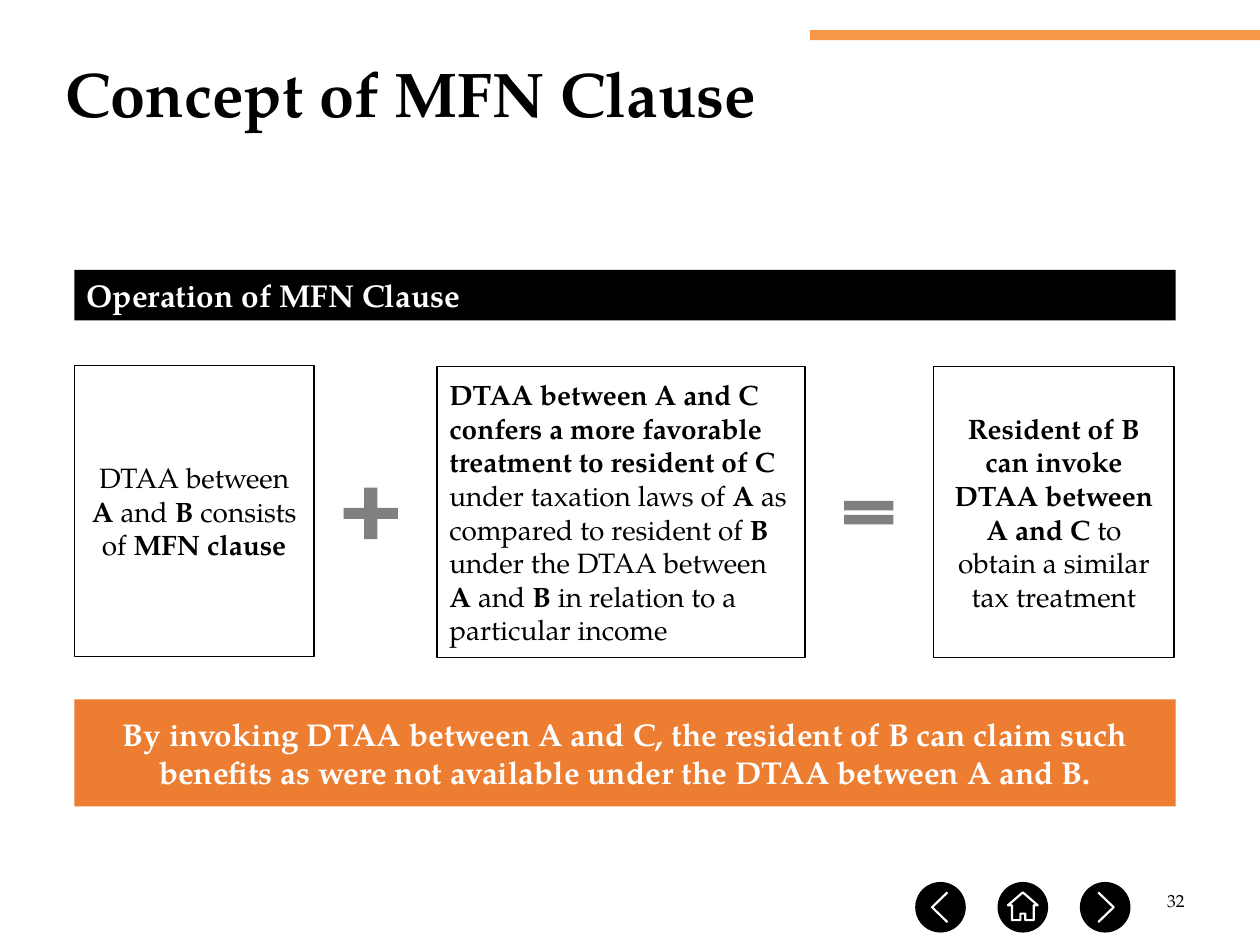
from pptx import Presentation, util as u
from pptx.dml.color import RGBColor
from pptx.enum import shapes, text

COLOURS = {
    "black": "000000",
    "white": "FFFFFF",
    "grey": "808080",
    "accent": "F79646",
    "orange": "ED7D31",
}
FONT = "TeX Gyre Pagella"
LEFT, CENTER, RIGHT = text.PP_ALIGN.LEFT, text.PP_ALIGN.CENTER, text.PP_ALIGN.RIGHT
TOP, MIDDLE = text.MSO_ANCHOR.TOP, text.MSO_ANCHOR.MIDDLE
RECT = shapes.MSO_SHAPE.RECTANGLE

deck = Presentation()
deck.slide_width, deck.slide_height = u.Cm(25.4), u.Cm(19.05)
slide = deck.slides.add_slide(deck.slide_layouts[6])


def draw(kind, place, fill=None, outline=None):
    part = slide.shapes.add_shape(kind, *map(u.Cm, place))
    part.shadow.inherit = False
    if fill:
        part.fill.solid()
        part.fill.fore_color.rgb = RGBColor.from_string(COLOURS[fill])
    else:
        part.fill.background()
    if outline:
        part.line.color.rgb = RGBColor.from_string(COLOURS[outline])
        part.line.width = u.Pt(0.75)
    else:
        part.line.fill.background()
    return part


def write(part, marked, size, colour="black", align=LEFT, anchor=MIDDLE):
    frame = part.text_frame
    frame.word_wrap = True
    frame.vertical_anchor = anchor
    paragraph = frame.paragraphs[0]
    paragraph.alignment = align
    paragraph.font.name = FONT
    paragraph.font.size = u.Pt(size)
    paragraph.font.color.rgb = RGBColor.from_string(COLOURS[colour])
    for index, words in enumerate(marked.split("*")):
        if words:
            run = paragraph.add_run()
            run.text = words
            run.font.bold = index % 2 == 1


title = slide.shapes.add_textbox(u.Cm(1.07), u.Cm(0.84), u.Cm(22.61), u.Cm(3.53))
title.text_frame.margin_top = u.Cm(0.25)
write(title, "*Concept of MFN Clause*", 36, anchor=TOP)

draw(RECT, (16.33, 0.61, 9.07, 0.2), "accent")

page_number = slide.shapes.add_textbox(u.Cm(18.21), u.Cm(17.65), u.Cm(5.92), u.Cm(1.02))
write(page_number, "32", 10, align=RIGHT)

house_half = [(0.3, -0.04), (0.22, -0.04), (0.22, 0.26), (0.05, 0.26), (0.05, 0.13)]
house = [(0, -0.3)] + house_half + [(-x, y) for x, y in reversed(house_half)]
back = [(0.14, -0.3), (-0.17, 0), (0.14, 0.3)]
forward = [(-x, y) for x, y in back]
button_size, button_y = 1.02, 18.29
for index, (icon, closed) in enumerate([(back, False), (house, True), (forward, False)]):
    button_x = 18.96 + 1.66 * index
    draw(
        shapes.MSO_SHAPE.OVAL,
        (button_x - button_size / 2, button_y - button_size / 2, button_size, button_size),
        "black",
    )
    points = [(u.Cm(button_x + x), u.Cm(button_y + y)) for x, y in icon]
    builder = slide.shapes.build_freeform(*points[0])
    builder.add_line_segments(points[1:], close=closed)
    symbol = builder.convert_to_shape()
    symbol.shadow.inherit = False
    symbol.fill.background()
    symbol.line.color.rgb = RGBColor.from_string(COLOURS["white"])
    symbol.line.width = u.Pt(1.25)

conditions = [
    ((1.5, 7.37, 4.83, 5.87), CENTER, "DTAA between *A *and *B *consists of *MFN clause*"),
    (
        (8.81, 7.39, 7.42, 5.87),
        LEFT,
        "*DTAA between A and C confers a more favorable treatment to resident of C*"
        " under taxation laws of *A *as compared to resident of *B *under the DTAA"
        " between *A* and *B* in relation to a particular income",
    ),
    (
        (18.82, 7.39, 4.85, 5.87),
        CENTER,
        "*Resident of B can invoke DTAA between A and C *to obtain a similar tax treatment",
    ),
]
for place, align, words in conditions:
    write(draw(RECT, place, outline="black"), words, 16, align=align)

plus = draw(shapes.MSO_SHAPE.CROSS, (6.93, 9.83, 1.09, 1.04), "grey")
plus.adjustments[0] = 0.395
draw(shapes.MSO_SHAPE.MATH_EQUAL, (16.84, 9.93, 1.35, 0.81), "grey")

heading = draw(RECT, (1.5, 5.44, 22.2, 1.02), "black")
write(heading, "*Operation of MFN Clause*", 18, "white", anchor=TOP)

conclusion = draw(RECT, (1.5, 14.1, 22.2, 2.16), "orange")
write(
    conclusion,
    "*By invoking DTAA between A and C, the resident of B can claim such benefits"
    " as were not available under the DTAA between A and B.*",
    18,
    "white",
    CENTER,
)

deck.save("out.pptx")
